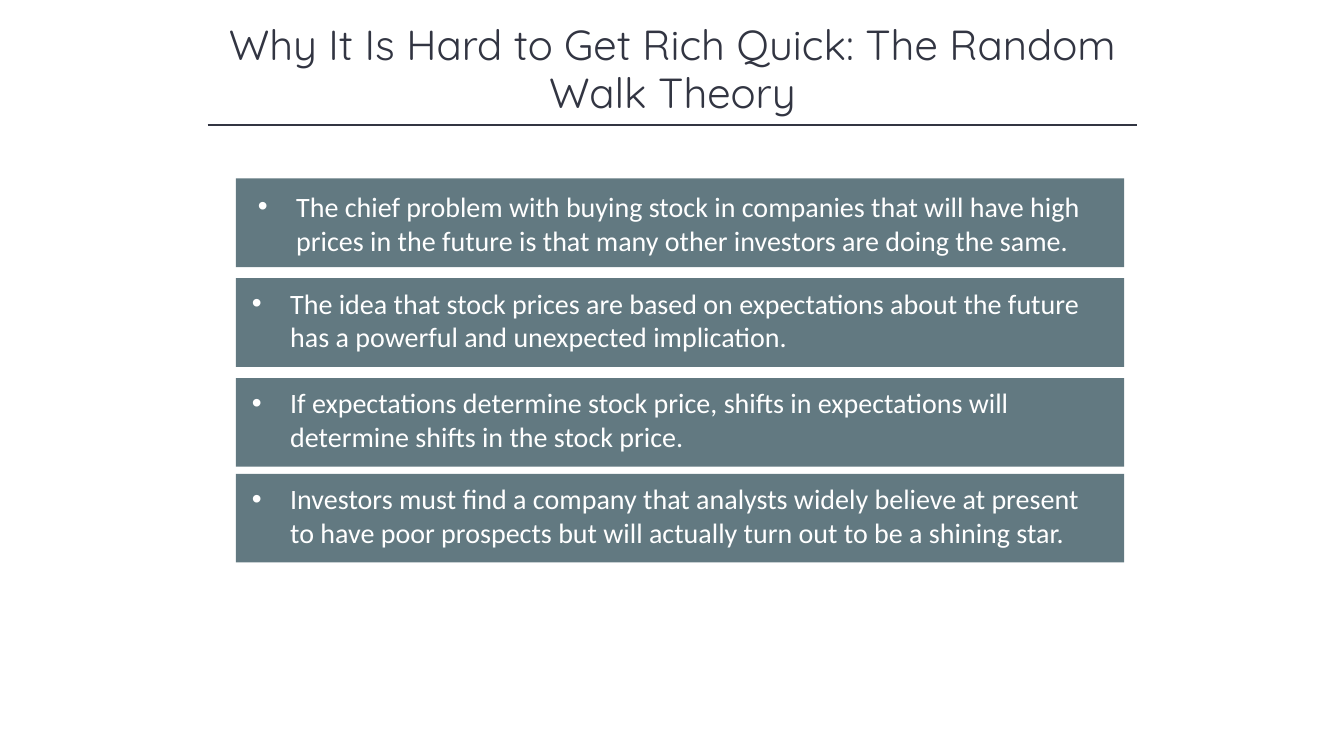
from dataclasses import dataclass

from lxml import etree
from pptx import Presentation
from pptx.dml.color import RGBColor
from pptx.enum.shapes import MSO_CONNECTOR as Connector, MSO_SHAPE as Shape
from pptx.enum.text import MSO_ANCHOR as Anchor, MSO_AUTO_SIZE as AutoSize, PP_ALIGN as Align
from pptx.oxml.ns import qn
from pptx.util import Inches, Pt


@dataclass(frozen=True)
class Theme:
    ink: RGBColor = RGBColor(0x32, 0x35, 0x42)
    panel: RGBColor = RGBColor(0x62, 0x79, 0x81)
    panel_text: RGBColor = RGBColor(0xFF, 0xFF, 0xFF)
    title_font: str = "Quicksand"
    body_font: str = "Calibri"
    title_size: int = 30
    body_size: int = 20


THEME = Theme()
TITLE = "Why It Is Hard to Get Rich Quick: The Random Walk Theory"
PANEL_LEFT, PANEL_WIDTH, PANEL_HEIGHT = 2.34, 8.81, 0.88
POINT_WIDTH, POINT_HEIGHT = 8.54, 0.77
POINTS = [
    (1.77, 0.12, 0.06,
     "The chief problem with buying stock in companies that will have high "
     "prices in the future is that many other investors are doing the same."),
    (2.76, 0.06, 0.03,
     "The idea that stock prices are based on expectations about the future "
     "has a powerful and unexpected implication."),
    (3.75, 0.06, 0.03,
     "If expectations determine stock price, shifts in expectations will "
     "determine shifts in the stock price."),
    (4.7, 0.06, 0.03,
     "Investors must find a company that analysts widely believe at present "
     "to have poor prospects but will actually turn out to be a shining star."),
]


def add_bullet(paragraph, indent):
    properties = paragraph._p.get_or_add_pPr()
    properties.set("marL", str(Inches(indent)))
    properties.set("indent", str(-Inches(indent)))
    etree.SubElement(properties, qn("a:buFont")).set("typeface", "Arial")
    etree.SubElement(properties, qn("a:buChar")).set("char", "•")


def write_text(shape, text, *, font, size, color, align=Align.LEFT,
               anchor=Anchor.MIDDLE, side_inset=0.1, line_spacing=None, bullet_indent=None):
    frame = shape.text_frame
    frame.text = text
    frame.word_wrap = True
    frame.auto_size = AutoSize.NONE
    frame.vertical_anchor = anchor
    frame.margin_left = frame.margin_right = Inches(side_inset)
    frame.margin_top = frame.margin_bottom = Inches(0.05)
    paragraph = frame.paragraphs[0]
    paragraph.alignment = align
    if line_spacing:
        paragraph.line_spacing = line_spacing
    if bullet_indent:
        add_bullet(paragraph, bullet_indent)
    run_font = paragraph.runs[0].font
    run_font.name = font
    run_font.size = Pt(size)
    run_font.color.rgb = color


def place_title(slide):
    title = slide.shapes.title
    title.left, title.top = Inches(1.67), Inches(0.14)
    title.width, title.height = Inches(10), Inches(1.11)
    write_text(title, TITLE, font=THEME.title_font, size=THEME.title_size,
               color=THEME.ink, align=Align.CENTER, side_inset=0.2, line_spacing=0.95)


def add_rule(slide, left, right, y):
    rule = slide.shapes.add_connector(
        Connector.STRAIGHT, Inches(left), Inches(y), Inches(right), Inches(y))
    rule.line.color.rgb = THEME.ink
    rule.line.width = Pt(1)
    etree.SubElement(rule._element.spPr, qn("a:effectLst"))


def add_block(shapes, left, top, width, height):
    block = shapes.add_shape(
        Shape.RECTANGLE, Inches(left), Inches(top), Inches(width), Inches(height))
    block.shadow.inherit = False
    block.fill.solid()
    block.fill.fore_color.rgb = THEME.panel
    block.line.fill.background()
    return block


def add_point(slide, top, inset_x, inset_y, text):
    panel = slide.shapes.add_group_shape()
    add_block(panel.shapes, PANEL_LEFT, top, PANEL_WIDTH, PANEL_HEIGHT)
    point = add_block(panel.shapes, PANEL_LEFT + inset_x, top + inset_y,
                      POINT_WIDTH, POINT_HEIGHT)
    write_text(point, text, font=THEME.body_font, size=THEME.body_size,
               color=THEME.panel_text, anchor=Anchor.TOP, bullet_indent=0.38)


def main():
    deck = Presentation()
    deck.slide_width, deck.slide_height = Inches(13.33), Inches(7.5)
    slide = deck.slides.add_slide(deck.slide_layouts[5])
    place_title(slide)
    add_rule(slide, 2.06, 11.28, 1.24)
    for top, inset_x, inset_y, text in POINTS:
        add_point(slide, top, inset_x, inset_y, text)
    deck.save("out.pptx")


if __name__ == "__main__":
    main()
